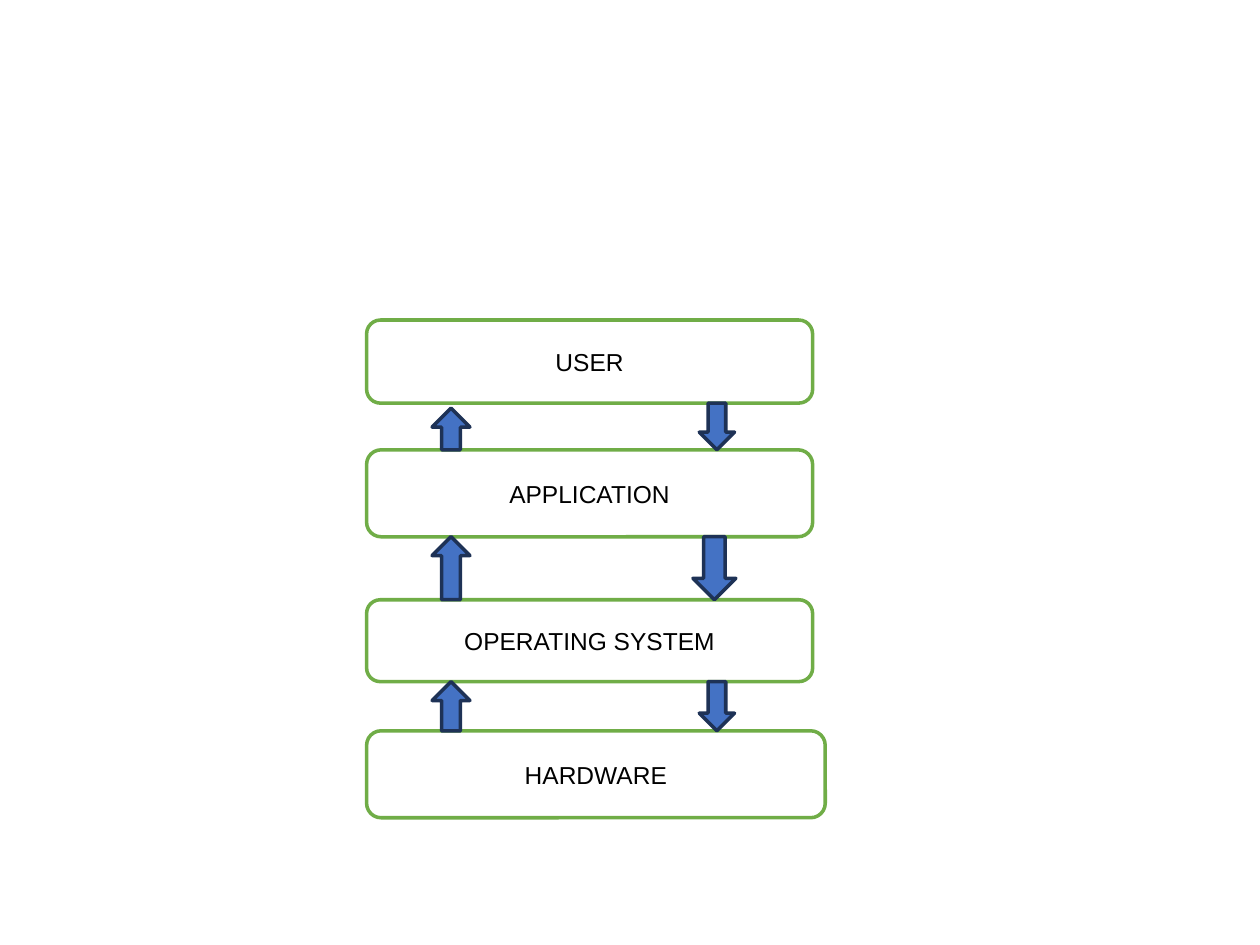
from dataclasses import dataclass

import pptx
import pptx.dml.color
import pptx.enum.shapes
import pptx.enum.text
import pptx.util

Inches = pptx.util.Inches
RGBColor = pptx.dml.color.RGBColor
ShapeType = pptx.enum.shapes.MSO_SHAPE

WHITE = RGBColor(0xFF, 0xFF, 0xFF)
BLACK = RGBColor(0x00, 0x00, 0x00)
GREEN = RGBColor(0x70, 0xAD, 0x47)
BLUE = RGBColor(0x44, 0x72, 0xC4)
NAVY = RGBColor(0x1E, 0x32, 0x56)

LAYER_LEFT = 2.91
UP_ARROW_LEFT = 3.43
UP_ARROW_WIDTH = 0.3


@dataclass(frozen=True)
class Layer:
    label: str
    top: float
    height: float
    width: float = 3.54

    @property
    def bottom(self) -> float:
        return self.top + self.height


@dataclass(frozen=True)
class Exchange:
    down_left: float = 5.55
    down_width: float = 0.28
    up_gap: float = 0


LAYERS = [
    Layer("USER", 2.54, 0.66),
    Layer("APPLICATION", 3.57, 0.69),
    Layer("OPERATING SYSTEM", 4.76, 0.65),
    Layer("HARDWARE", 5.8, 0.69, width=3.64),
]
EXCHANGES = [
    Exchange(up_gap=0.04),
    Exchange(down_left=5.5, down_width=0.34),
    Exchange(),
]


def add_outlined_shape(slide, kind, left: float, top: float, width: float,
                       height: float, fill: RGBColor, line: RGBColor):
    shape = slide.shapes.add_shape(
        kind, Inches(left), Inches(top), Inches(width), Inches(height))
    shape.shadow.inherit = False
    shape.fill.solid()
    shape.fill.fore_color.rgb = fill
    shape.line.color.rgb = line
    shape.line.width = pptx.util.Pt(2)
    return shape


def draw_layer(slide, layer: Layer) -> None:
    shape = add_outlined_shape(
        slide, ShapeType.ROUNDED_RECTANGLE, LAYER_LEFT, layer.top,
        layer.width, layer.height, WHITE, GREEN)
    text_frame = shape.text_frame
    text_frame.vertical_anchor = pptx.enum.text.MSO_ANCHOR.MIDDLE
    paragraph = text_frame.paragraphs[0]
    paragraph.text = layer.label
    paragraph.alignment = pptx.enum.text.PP_ALIGN.CENTER
    paragraph.font.name = "Arial"
    paragraph.font.size = pptx.util.Pt(14)
    paragraph.font.color.rgb = BLACK


def draw_exchange(slide, upper: Layer, lower: Layer, exchange: Exchange) -> None:
    gap = lower.top - upper.bottom
    add_outlined_shape(
        slide, ShapeType.DOWN_ARROW, exchange.down_left, upper.bottom,
        exchange.down_width, gap, BLUE, NAVY)
    add_outlined_shape(
        slide, ShapeType.UP_ARROW, UP_ARROW_LEFT, upper.bottom + exchange.up_gap,
        UP_ARROW_WIDTH, gap - exchange.up_gap, BLUE, NAVY)


def main() -> None:
    presentation = pptx.Presentation()
    presentation.slide_width = Inches(10)
    presentation.slide_height = Inches(7.5)
    slide = presentation.slides.add_slide(presentation.slide_layouts[6])
    for layer in LAYERS:
        draw_layer(slide, layer)
    for upper, lower, exchange in zip(LAYERS, LAYERS[1:], EXCHANGES):
        draw_exchange(slide, upper, lower, exchange)
    presentation.save("out.pptx")


if __name__ == "__main__":
    main()
